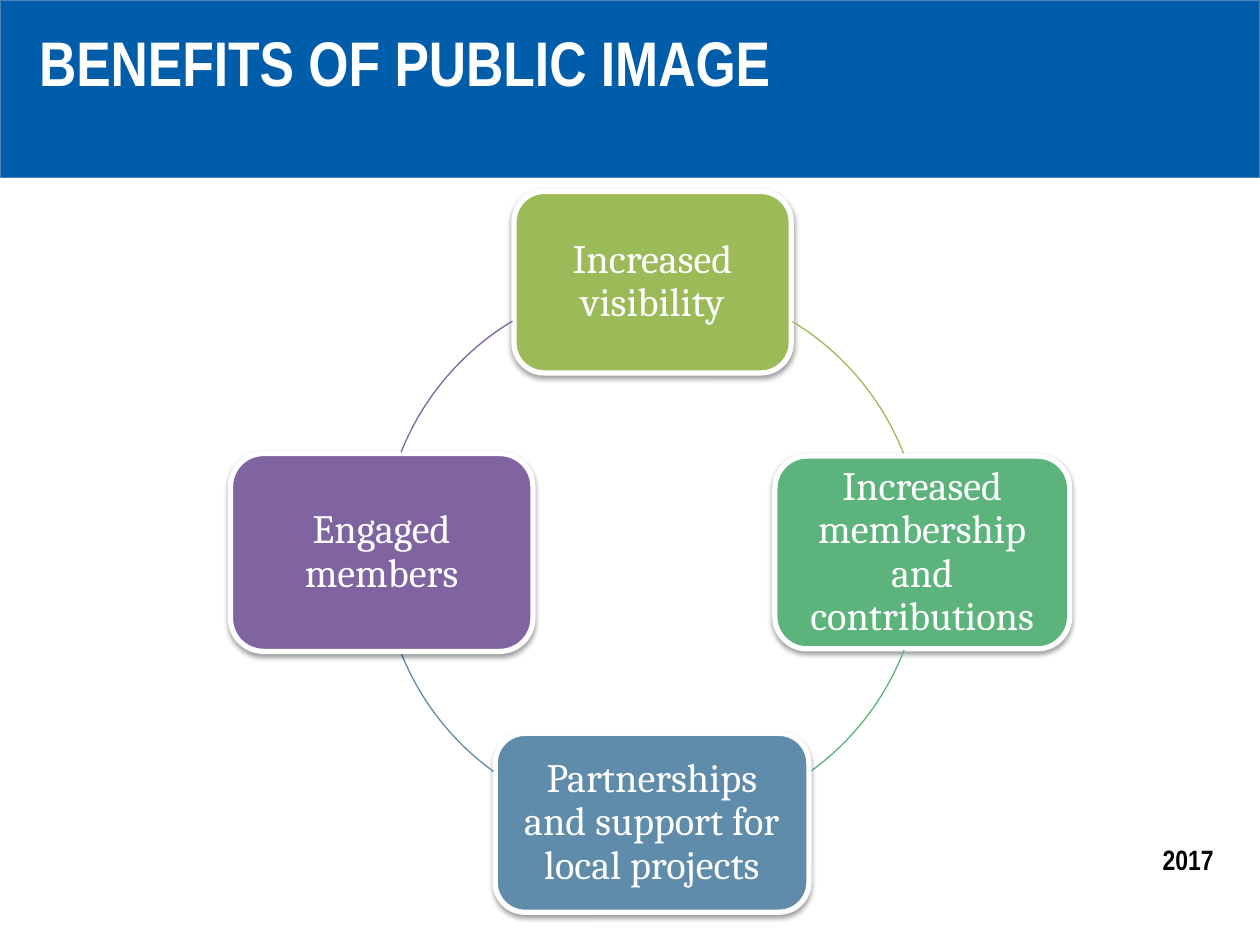
"""Build the slide on the benefits of public image as a four-step cycle."""
from lxml.etree import fromstring
from pptx import Presentation
from pptx.dml.color import RGBColor
from pptx.enum.shapes import MSO_SHAPE as Preset
from pptx.enum.text import MSO_ANCHOR as Anchor, MSO_AUTO_SIZE as AutoSize, PP_ALIGN as Align
from pptx.oxml.ns import nsdecls, qn
from pptx.util import Inches, Pt


def rgb(value):
    return RGBColor.from_string(value)


def write(shape, text, color, align, anchor, spacing, font):
    frame = shape.text_frame
    frame.text = text
    frame.word_wrap = True
    frame.auto_size = AutoSize.NONE
    frame.vertical_anchor = anchor
    paragraph = frame.paragraphs[0]
    paragraph.alignment = align
    paragraph.line_spacing = spacing
    for attribute, value in font.items():
        setattr(paragraph.font, attribute, value)
    paragraph.font.color.rgb = rgb(color)


prs = Presentation()
prs.slide_width, prs.slide_height = Inches(10), Inches(7.5)
slide = prs.slides.add_slide(prs.slide_layouts[5])
shapes = slide.shapes

band = shapes.add_shape(Preset.RECTANGLE, 0, 0, Inches(10), Inches(1.41))
band.shadow.inherit = False
band.fill.solid()
band.fill.fore_color.rgb = rgb("005DAA")
band.line.color.rgb = rgb("4F81BD")
band.line.width = Pt(0.75)

title = shapes.title
title.element.addprevious(band.element)
title.left, title.top, title.width, title.height = map(Inches, (0.21, 0.25, 9.59, 0.96))
write(title, "BENEFITS OF PUBLIC IMAGE", "FFFFFF", Align.LEFT, Anchor.TOP, 0.8,
      {"name": "Arial Narrow", "size": Pt(36), "bold": True})

year = shapes.add_textbox(Inches(8.29), Inches(6.64), Inches(1.44), Inches(0.37))
write(year, "2017", "000000", Align.RIGHT, Anchor.TOP, 1.0,
      {"name": "Arial Narrow", "size": Pt(16), "bold": True})

benefits = [
    ("Increased visibility", "9BBB59", (4.08, 1.52, 2.2, 1.44), (301.3, 338.9)),
    ("Increased membership and contributions", "5CB37C", (6.15, 3.62, 2.34, 1.53), (21.1, 54.1)),
    ("Partnerships and support for local projects", "608CAB", (3.93, 5.82, 2.49, 1.42), (125.9, 158.2)),
    ("Engaged members", "8064A2", (1.83, 3.6, 2.4, 1.57), (201.8, 238.9)),
]
shadow_xml = (
    f'<a:outerShdw {nsdecls("a")} blurRad="{Pt(3.1)}" dist="{Pt(1.6)}" dir="5400000" rotWithShape="0">'
    '<a:srgbClr val="000000"><a:alpha val="38000"/></a:srgbClr></a:outerShdw>'
)

for benefit, color, bounds, angles in benefits:
    step = shapes.add_shape(Preset.ROUNDED_RECTANGLE, *map(Inches, bounds))
    step.shadow.inherit = False
    step.element.spPr.find(qn("a:effectLst")).append(fromstring(shadow_xml))
    step.fill.solid()
    step.fill.fore_color.rgb = rgb(color)
    step.line.color.rgb = rgb("FFFFFF")
    step.line.width = Pt(3)
    for side in ("left", "top", "right", "bottom"):
        setattr(step.text_frame, f"margin_{side}", Inches(0.1))
    write(step, benefit, "FFFFFF", Align.CENTER, Anchor.MIDDLE, 0.9,
          {"name": "Cambria", "size": Pt(23)})

    arc = shapes.add_shape(Preset.ARC, *map(Inches, (3.03, 2.24, 4.29, 4.29)))
    arc.shadow.inherit = False
    for index, degrees in enumerate(angles):
        arc.adjustments[index] = degrees * 0.6
    arc.fill.background()
    arc.line.color.rgb = rgb(color)
    arc.line.width = Pt(0.75)

prs.save("out.pptx")
